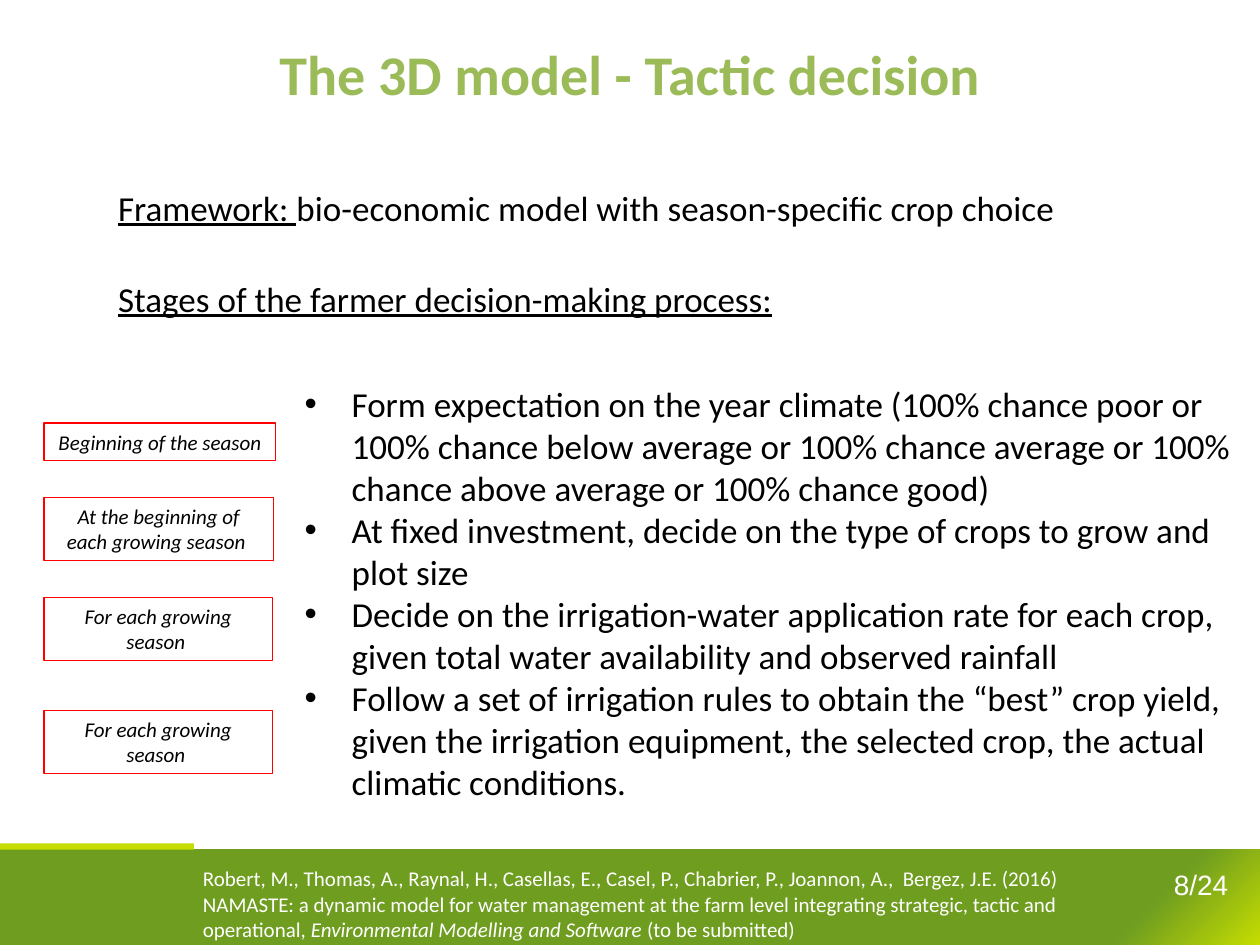
from lxml.etree import SubElement
from pptx import Presentation
from pptx.dml.color import RGBColor
from pptx.enum.shapes import MSO_SHAPE
from pptx.enum.text import MSO_ANCHOR, PP_ALIGN
from pptx.oxml import parse_xml
from pptx.oxml.ns import nsdecls, qn
from pptx.util import Cm, Pt

COLORS = {"title": "9BBB59", "text": "000000", "label": "FF0000",
          "band": "6F9D20", "accent": "C5DD01", "light": "FFFFFF"}

STAGES = [
    "Form expectation on the year climate (100% chance poor or 100% chance below average "
    "or 100% chance average or 100% chance above average or 100% chance good)",
    "At fixed investment, decide on the type of crops to grow and plot size",
    "Decide on the irrigation-water application rate for each crop, given total water "
    "availability and observed rainfall",
    "Follow a set of irrigation rules to obtain the “best” crop yield, given the irrigation "
    "equipment, the selected crop, the actual climatic conditions.",
]

# text, top within the column, width, height
TIMINGS = [
    ("Beginning of the season", 0, 4.67, 0.76),
    ("At the beginning of each growing season ", 1.5, 4.62, 1.27),
    ("For each growing season ", 3.51, 4.6, 1.27),
    ("For each growing season ", 5.79, 4.6, 1.27),
]


def rgb(name):
    return RGBColor.from_string(COLORS[name])


def add_run(p, text, size, color="text", font="Calibri", **style):
    r = p.add_run()
    r.text = text
    r.font.name = font
    r.font.size = Pt(size)
    r.font.color.rgb = rgb(color)
    for key, value in style.items():
        setattr(r.font, key, value)


def add_text(s, x, y, w, h):
    tf = s.shapes.add_textbox(Cm(x), Cm(y), Cm(w), Cm(h)).text_frame
    tf.word_wrap = True
    return tf


def add_rect(s, x, y, w, h):
    sp = s.shapes.add_shape(MSO_SHAPE.RECTANGLE, Cm(x), Cm(y), Cm(w), Cm(h))
    sp.shadow.inherit = False
    return sp


def add_bullet(p, indent):
    pPr = p._p.get_or_add_pPr()
    pPr.set("marL", str(Cm(indent)))
    pPr.set("indent", str(-Cm(indent)))
    SubElement(pPr, qn("a:buFont"), typeface="Arial")
    SubElement(pPr, qn("a:buChar"), char="•")


def fill_corner_glow(sp):
    """Radial gradient that starts in the bottom right corner."""
    stops = "".join(f'<a:gs pos="{pos}"><a:srgbClr val="{COLORS[name]}"/></a:gs>'
                    for pos, name in ((0, "accent"), (11000, "band"), (100000, "band")))
    sp.fill.background()
    spPr = sp._element.spPr
    spPr.replace(spPr.find(qn("a:noFill")), parse_xml(
        f'<a:gradFill {nsdecls("a")} rotWithShape="1"><a:gsLst>{stops}</a:gsLst>'
        '<a:path path="circle"><a:fillToRect l="100000" t="100000"/></a:path></a:gradFill>'))


def footer(s, x, y, w, h):
    band = add_rect(s, x, y + 0.12, w, h - 0.12)
    fill_corner_glow(band)
    band.line.fill.background()

    accent = add_rect(s, x, y, 3.91, 0.13)
    accent.fill.solid()
    accent.fill.fore_color.rgb = rgb("accent")
    accent.line.fill.background()

    p = add_text(s, x + 21.89, y + 0.36, 3.12, 0.69).paragraphs[0]
    p.alignment = PP_ALIGN.RIGHT
    add_run(p, "8/24", 16, "light", "Arial")

    p = add_text(s, x + 3.84, y + 0.33, 18.87, 1.8).paragraphs[0]
    add_run(p, "Robert, M., Thomas, A., Raynal, H., Casellas, E., Casel, P., Chabrier, P., "
               "Joannon, A.,  Bergez, J.E. (2016) NAMASTE: a dynamic model for water "
               "management at the farm level integrating strategic, tactic and operational, ",
            12, "light")
    add_run(p, "Environmental Modelling and Software ", 12, "light", italic=True)
    add_run(p, "(to be submitted)", 12, "light")


def title(s, x, y, w, h):
    p = add_text(s, x, y, w, h).paragraphs[0]
    p.alignment = PP_ALIGN.CENTER
    p.line_spacing = 1.5
    add_run(p, "The 3D model - Tactic decision", 32, "title", bold=True)


def framework(s, x, y, w, h):
    tf = add_text(s, x, y, w, h)
    p = tf.paragraphs[0]
    add_run(p, "Framework: ", 20, underline=True)
    add_run(p, "bio-economic model with season-specific crop choice", 20)
    p = tf.add_paragraph()
    p.space_before = Pt(28)
    add_run(p, "Stages of the farmer decision-making process:", 20, underline=True)


def timing_labels(s, x, y):
    for text, top, w, h in TIMINGS:
        sp = add_rect(s, x, y + top, w, h)
        sp.fill.background()
        sp.line.color.rgb = rgb("label")
        sp.line.width = Pt(0.75)
        tf = sp.text_frame
        tf.word_wrap = True
        tf.vertical_anchor = MSO_ANCHOR.TOP
        p = tf.paragraphs[0]
        p.alignment = PP_ALIGN.CENTER
        add_run(p, text, 12, italic=True)


def stage_list(s, x, y, w, h):
    tf = add_text(s, x, y, w, h)
    for i, text in enumerate(STAGES):
        p = tf.add_paragraph() if i else tf.paragraphs[0]
        add_bullet(p, 0.95)
        add_run(p, text, 20)


def main():
    prs = Presentation()
    prs.slide_width, prs.slide_height = Cm(25.4), Cm(19.05)
    s = prs.slides.add_slide(prs.slide_layouts[6])
    footer(s, 0, 17, 25.4, 2.05)
    title(s, 0, 0, 25.4, 2.11)
    framework(s, 2.13, 3.63, 22.1, 15.72)
    timing_labels(s, 0.89, 8.53)
    stage_list(s, 5.89, 7.59, 19.43, 8.81)
    prs.save("out.pptx")


if __name__ == "__main__":
    main()
